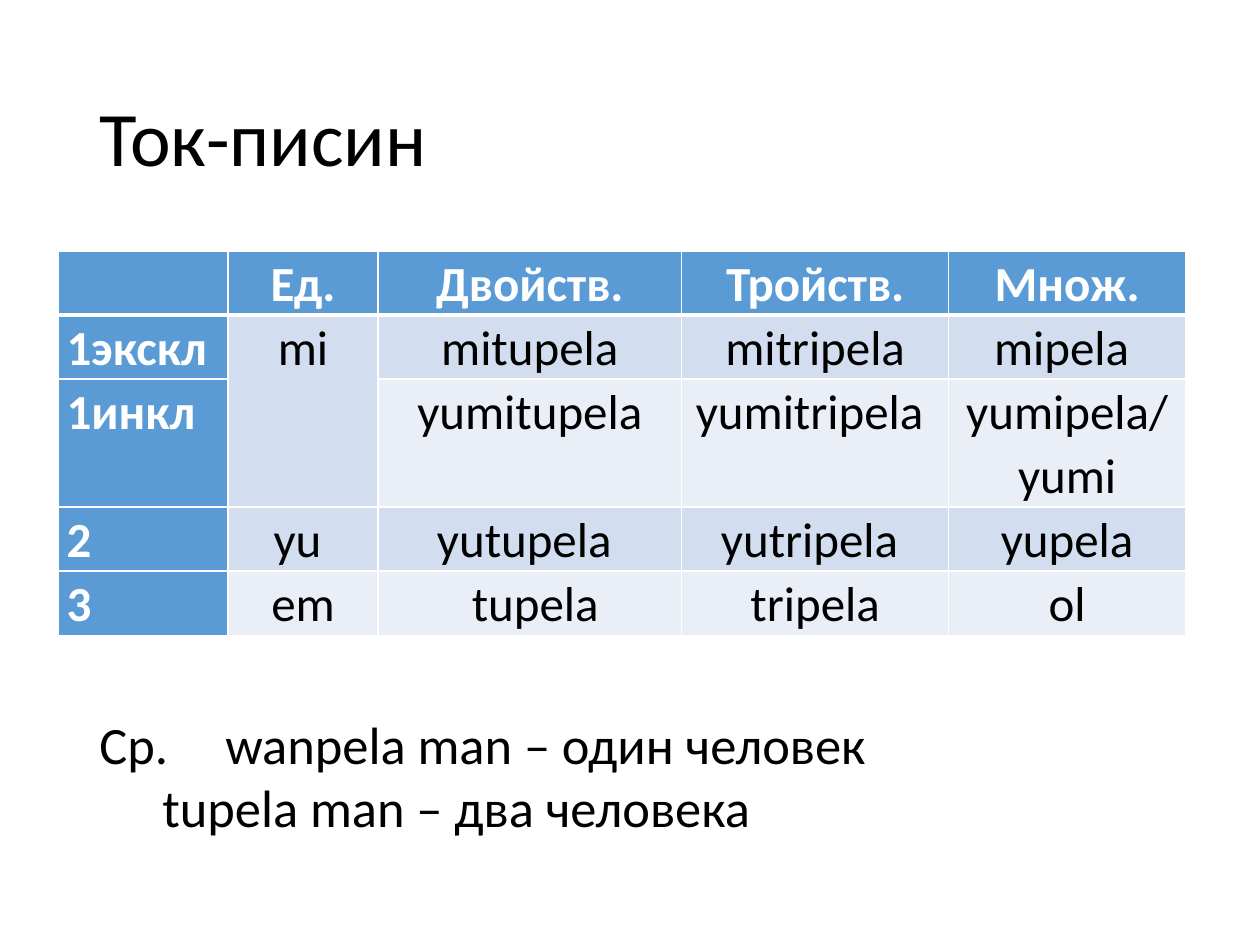
"""Build a slide with the Tok Pisin personal pronoun table."""
from dataclasses import dataclass
from typing import Any

from lxml import etree
from pptx import Presentation, util as u
from pptx.dml.color import RGBColor
from pptx.enum import text as t
from pptx.oxml import ns

COLOURS = {
    "ink": "000000",
    "paper": "FFFFFF",
    "head": "5B9BD5",
    "odd": "D2DEEF",
    "even": "EAEFF7",
}
FONT = "Calibri"
COLUMN_WIDTHS = (1.35, 1.19, 2.41, 2.12, 1.88)
CELL_FORMAT = {
    "margin_left": u.Inches(0.07),
    "margin_right": u.Inches(0.07),
    "margin_top": 0,
    "margin_bottom": 0,
}


@dataclass(frozen=True)
class PersonRow:
    label: str
    forms: tuple[str, ...]
    height: float = 0.5


PRONOUNS = (
    PersonRow("", ("Ед.", "Двойств.", "Тройств.", "Множ.")),
    PersonRow("1экскл", ("mi", "mitupela", "mitripela", "mipela ")),
    PersonRow("1инкл", ("", "yumitupela", "yumitripela ", "yumipela/yumi"), 1.0),
    PersonRow("2", ("yu ", "yutupela ", "yutripela ", "yupela")),
    PersonRow("3", ("em", " tupela", "tripela", "ol")),
)
EXAMPLES = ("Ср. \twanpela man – один человек", "\ttupela man – два человека")


def apply(target: Any, values: dict[str, Any]) -> None:
    """Set every attribute named in values."""
    for key, value in values.items():
        setattr(target, key, value)


def write(paragraph: Any, words: str, size: float, colour: str = "ink",
          bold: bool = False, **layout: Any) -> None:
    """Add one formatted run and lay out its paragraph."""
    apply(paragraph, layout)
    run = paragraph.add_run()
    run.text = words
    apply(run.font, {"name": FONT, "size": u.Pt(size), "bold": bold})
    run.font.color.rgb = RGBColor.from_string(COLOURS[colour])


def draw_borders(cell: Any, is_header: bool) -> None:
    """Give a cell white borders, with a thick rule under the header."""
    properties = cell._tc.get_or_add_tcPr()
    for position, side in enumerate("LRTB"):
        width = 3 if is_header and side == "B" else 1
        line = etree.Element(ns.qn(f"a:ln{side}"), w=str(u.Pt(width)))
        fill = etree.SubElement(line, ns.qn("a:solidFill"))
        etree.SubElement(fill, ns.qn("a:srgbClr"), val=COLOURS["paper"])
        properties.insert(position, line)


def draw_cell(cell: Any, words: str, row: int, column: int) -> None:
    """Fill, border and write one table cell."""
    is_head = row == 0 or column == 0
    band = "head" if is_head else "odd" if row % 2 else "even"
    apply(cell, CELL_FORMAT)
    cell.fill.solid()
    cell.fill.fore_color.rgb = RGBColor.from_string(COLOURS[band])
    draw_borders(cell, row == 0)
    if words:
        align = t.PP_ALIGN.CENTER if column else t.PP_ALIGN.JUSTIFY
        write(cell.text_frame.paragraphs[0], words, 28,
              "paper" if is_head else "ink", is_head,
              alignment=align, line_spacing=1.07)


def draw_title(slide: Any) -> None:
    """Place and write the slide title."""
    title = slide.shapes.title
    apply(title, {"left": u.Inches(0.69), "top": u.Inches(0.4),
                  "width": u.Inches(8.62), "height": u.Inches(1.45)})
    apply(title.text_frame, {"vertical_anchor": t.MSO_ANCHOR.MIDDLE,
                             "auto_size": t.MSO_AUTO_SIZE.NONE})
    write(title.text_frame.paragraphs[0], "Ток-писин", 44,
          alignment=t.PP_ALIGN.LEFT, line_spacing=0.9)


def draw_pronouns(slide: Any) -> None:
    """Draw the table of pronouns by person and number."""
    pronouns = slide.shapes.add_table(
        len(PRONOUNS), len(COLUMN_WIDTHS), u.Inches(0.46), u.Inches(1.99),
        u.Inches(sum(COLUMN_WIDTHS)),
        u.Inches(sum(person.height for person in PRONOUNS))).table
    pronouns.first_col = True
    for column, width in zip(pronouns.columns, COLUMN_WIDTHS):
        column.width = u.Inches(width)
    pronouns.cell(1, 1).merge(pronouns.cell(2, 1))
    for row, person in enumerate(PRONOUNS):
        pronouns.rows[row].height = u.Inches(person.height)
        for column, words in enumerate((person.label, *person.forms)):
            draw_cell(pronouns.cell(row, column), words, row, column)


def draw_examples(slide: Any) -> None:
    """Write the numeral examples under the table."""
    examples = slide.shapes.add_textbox(
        u.Inches(0.69), u.Inches(5.6), u.Inches(8.43), u.Inches(1.11)).text_frame
    apply(examples, {"word_wrap": True,
                     "auto_size": t.MSO_AUTO_SIZE.SHAPE_TO_FIT_TEXT})
    for index, words in enumerate(EXAMPLES):
        paragraph = examples.add_paragraph() if index else examples.paragraphs[0]
        write(paragraph, words, 30)


def main() -> None:
    """Assemble and save the slide."""
    deck = Presentation()
    apply(deck, {"slide_width": u.Inches(10), "slide_height": u.Inches(7.5)})
    slide = deck.slides.add_slide(deck.slide_layouts.get_by_name("Title Only"))
    draw_title(slide)
    draw_pronouns(slide)
    draw_examples(slide)
    deck.save("out.pptx")


if __name__ == "__main__":
    main()
